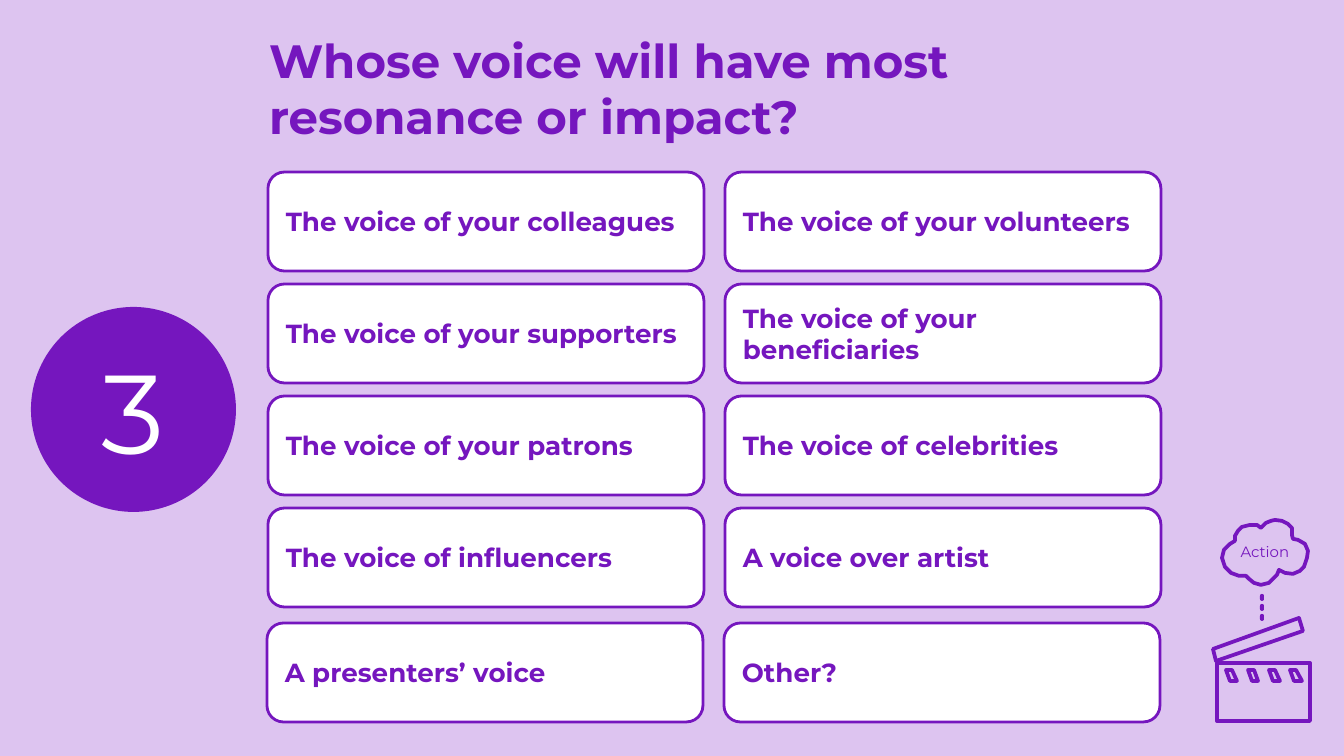
from pptx import Presentation
from pptx.dml.color import RGBColor
from pptx.enum.shapes import MSO_SHAPE
from pptx.enum.text import MSO_ANCHOR, PP_ALIGN
from pptx.util import Pt

ROUNDED, OVAL = MSO_SHAPE.ROUNDED_RECTANGLE, MSO_SHAPE.OVAL
TOP, MIDDLE = MSO_ANCHOR.TOP, MSO_ANCHOR.MIDDLE
LEFT, CENTER = PP_ALIGN.LEFT, PP_ALIGN.CENTER

SCALE = 914400 / 134.4  # EMU per px
FONT = "Montserrat"
PURPLE, LILAC, WHITE = "7516BE", "DDC4F0", "FFFFFF"

VOICES = [
    ("The voice of your colleagues", "The voice of your volunteers"),
    ("The voice of your supporters", "The voice of your beneficiaries"),
    ("The voice of your patrons", "The voice of celebrities"),
    ("The voice of influencers", "A voice over artist"),
    ("A presenters’ voice", "Other?"),
]

CLOUD = [
    (1275, 520), (1282, 521), (1288, 524), (1292, 528), (1292, 535),
    (1293, 539), (1298, 540), (1305, 544), (1308, 551), (1307, 558),
    (1304, 567), (1300, 571), (1293, 574), (1285, 573), (1279, 570),
    (1277, 575), (1273, 579), (1269, 583), (1261, 585), (1254, 583),
    (1249, 579), (1246, 576), (1239, 576), (1231, 573), (1225, 567),
    (1222, 558), (1224, 550), (1230, 544), (1235, 541), (1235, 536),
    (1238, 531), (1242, 527), (1250, 525), (1257, 525), (1261, 528),
    (1266, 523), (1271, 521),
]
CLAPPER_ARM = [(1299, 618), (1303, 631), (1216, 661), (1213, 649)]
CLAPPER_BODY = [(1217, 663), (1310, 663), (1310, 721), (1217, 721)]
SLOT = [(1226, 670), (1232, 670), (1237, 681), (1230, 681)]
SLOT_STEP = 21.5


def px(n):
    return round(n * SCALE)


def color(value):
    return RGBColor.from_string(value)


def set_text(shape, text, size=14, fill=PURPLE, bold=False, align=LEFT,
             anchor=MIDDLE, inset=13, wrap=True):
    tf = shape.text_frame
    tf.word_wrap = wrap
    tf.vertical_anchor = anchor
    tf.margin_left = tf.margin_right = px(inset)
    tf.margin_top = tf.margin_bottom = px(inset)
    p = tf.paragraphs[0]
    p.alignment = align
    r = p.add_run()
    r.text = text
    r.font.name = FONT
    r.font.size = Pt(size)
    r.font.bold = bold
    r.font.color.rgb = color(fill)


def add_text(shapes, x, y, w, h, text, **style):
    box = shapes.add_textbox(px(x), px(y), px(w), px(h))
    set_text(box, text, inset=0, **style)


def add_solid(shapes, kind, x, y, w, h, fill=PURPLE, line=None, adj=None):
    sp = shapes.add_shape(kind, px(x), px(y), px(w), px(h))
    sp.shadow.inherit = False
    sp.fill.solid()
    sp.fill.fore_color.rgb = color(fill)
    if line:
        sp.line.color.rgb = color(line)
        sp.line.width = Pt(1.5)
    else:
        sp.line.fill.background()
    if adj is not None:
        sp.adjustments[0] = adj
    return sp


def add_outline(shapes, points, width=2):
    builder = shapes.build_freeform(*points[0], scale=SCALE)
    builder.add_line_segments(points[1:], close=True)
    sp = builder.convert_to_shape()
    sp.shadow.inherit = False
    sp.fill.background()
    sp.line.color.rgb = color(PURPLE)
    sp.line.width = Pt(width)


def add_action_icon(s):
    shapes = s.shapes.add_group_shape().shapes
    # Clapperboard
    add_outline(shapes, CLAPPER_ARM)
    add_outline(shapes, CLAPPER_BODY)
    for i in range(4):
        add_outline(shapes, [(x + i * SLOT_STEP, y) for x, y in SLOT])
    # Speech cloud with its dotted tail
    add_outline(shapes, CLOUD)
    add_text(shapes, 1225, 542, 80, 20, "Action", size=8, align=CENTER,
             wrap=False)
    for i in range(3):
        add_solid(shapes, ROUNDED, 1260, 594 + 10 * i, 4, 7, adj=0.5)


def add_voice_boxes(s):
    for row, voices in enumerate(VOICES):
        last = row == len(VOICES) - 1
        # The last row sits slightly lower and further left
        x, y = (267, 623) if last else (268, 172 + 112 * row)
        for col, voice in enumerate(voices):
            box = add_solid(s.shapes, ROUNDED, x + 457 * col, y, 436, 99,
                            fill=WHITE, line=PURPLE, adj=0.167)
            set_text(box, voice, bold=True)


def main():
    prs = Presentation()
    prs.slide_width, prs.slide_height = px(1344), px(756)
    s = prs.slides.add_slide(prs.slide_layouts[6])
    s.background.fill.solid()
    s.background.fill.fore_color.rgb = color(LILAC)

    # Step number and title
    circle = add_solid(s.shapes, OVAL, 31, 307, 205, 205)
    set_text(circle, "3", size=60, fill=WHITE, align=CENTER)
    add_text(s.shapes, 269, 32, 780, 89,
             "Whose voice will have most resonance or impact?",
             size=25, bold=True, anchor=TOP)

    add_action_icon(s)
    add_voice_boxes(s)
    prs.save("out.pptx")


if __name__ == "__main__":
    main()
